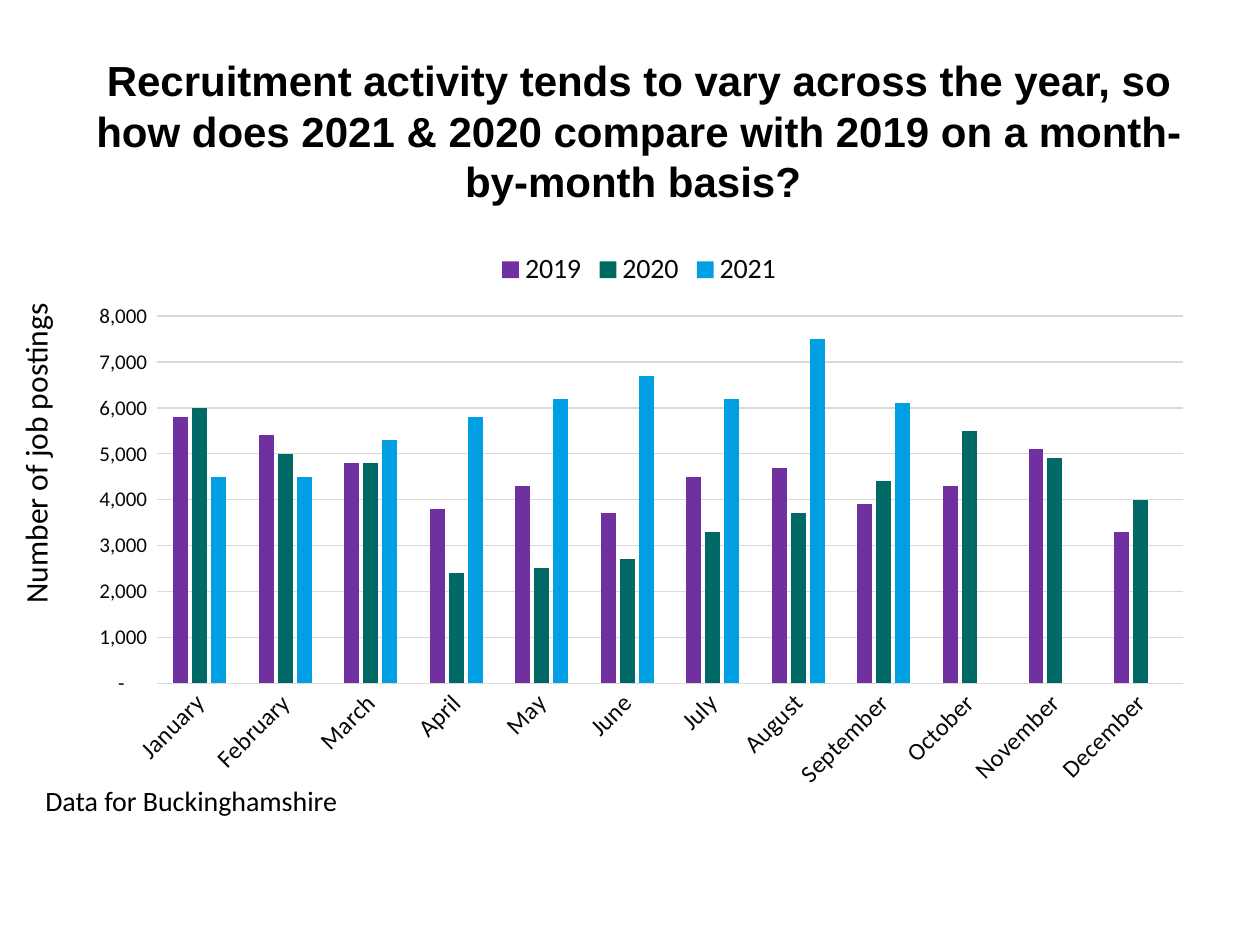
from pptx import Presentation
from pptx.chart.data import CategoryChartData
from pptx.dml.color import RGBColor
from pptx.enum.chart import XL_CHART_TYPE as ChartType, XL_LEGEND_POSITION as LegendPosition
from pptx.enum.chart import XL_TICK_MARK as TickMark
from pptx.enum.text import MSO_ANCHOR as Anchor, MSO_AUTO_SIZE as AutoSize, PP_ALIGN as Align
from pptx.util import Emu, Pt

EMU_PER_PX = 914400 / 126
BLACK = RGBColor(0x00, 0x00, 0x00)
LABEL = RGBColor(0x08, 0x08, 0x08)
GRID = RGBColor(0xD9, 0xD9, 0xD9)
PURPLE = RGBColor(0x70, 0x30, 0xA0)
GREEN = RGBColor(0x00, 0x69, 0x65)
BLUE = RGBColor(0x00, 0x9F, 0xE3)

NUMBER_FORMAT = '_-* #,##0_-;\\-* #,##0_-;_-* "-"??_-;_-@_-'
MONTHS = ["January", "February", "March", "April", "May", "June", "July",
          "August", "September", "October", "November", "December"]
POSTINGS = [
    ("2019", PURPLE, [5800, 5400, 4800, 3800, 4300, 3700,
                      4500, 4700, 3900, 4300, 5100, 3300]),
    ("2020", GREEN, [6000, 5000, 4800, 2400, 2500, 2700,
                     3300, 3700, 4400, 5500, 4900, 4000]),
    ("2021", BLUE, [4500, 4500, 5300, 5800, 6200, 6700,
                    6200, 7500, 6100, None, None, None]),
]


def px(*lengths):
    """Turn pixel lengths into EMU."""
    return [Emu(round(length * EMU_PER_PX)) for length in lengths]


def set_font(font, size, color, name="Calibri", bold=False):
    font.size = Pt(size)
    font.name = name
    font.bold = bold
    font.color.rgb = color


def set_line(line, color):
    line.color.rgb = color
    line.width = Pt(0.75)


class SlideBuilder:
    def __init__(self, presentation):
        self.slide = presentation.slides.add_slide(presentation.slide_layouts[6])

    def text(self, box, text, size, name="Calibri", bold=False,
             align=Align.LEFT, anchor=Anchor.TOP, auto_size=AutoSize.NONE, vertical=False):
        frame = self.slide.shapes.add_textbox(*px(*box)).text_frame
        frame.word_wrap = True
        frame.auto_size = auto_size
        frame.vertical_anchor = anchor
        if vertical:
            frame._txBody.bodyPr.set("vert", "vert270")
        paragraph = frame.paragraphs[0]
        paragraph.text = text
        paragraph.alignment = align
        set_font(paragraph.font, size, BLACK, name, bold)

    def column_chart(self, box, categories, series_rows):
        data = CategoryChartData(number_format=NUMBER_FORMAT)
        data.categories = categories
        for name, _, values in series_rows:
            data.add_series(name, values)
        chart = self.slide.shapes.add_chart(
            ChartType.COLUMN_CLUSTERED, *px(*box), data).chart
        set_font(chart.font, 10, BLACK)
        chart.has_title = False
        chart.has_legend = True
        chart.legend.position = LegendPosition.TOP
        chart.legend.include_in_layout = False
        set_font(chart.legend.font, 16, LABEL)

        plot = chart.plots[0]
        plot.gap_width = 219
        plot.overlap = -27
        plot.vary_by_categories = False
        for series, (_, color, _) in zip(plot.series, series_rows):
            series.format.fill.solid()
            series.format.fill.fore_color.rgb = color
            series.invert_if_negative = False

        for axis, size in ((chart.category_axis, 14), (chart.value_axis, 12)):
            axis.major_tick_mark = axis.minor_tick_mark = TickMark.NONE
            set_font(axis.tick_labels.font, size, LABEL)
        set_line(chart.category_axis.format.line, GRID)
        chart.category_axis._element.txPr.bodyPr.set("rot", "-2700000")

        value_axis = chart.value_axis
        value_axis.minimum_scale = 0
        value_axis.maximum_scale = 8000
        value_axis.major_unit = 1000
        value_axis.format.line.fill.background()
        set_line(value_axis.major_gridlines.format.line, GRID)
        value_axis.tick_labels.number_format = NUMBER_FORMAT
        value_axis.tick_labels.number_format_is_linked = False


def main():
    presentation = Presentation()
    presentation.slide_width, presentation.slide_height = px(1260, 945)
    builder = SlideBuilder(presentation)
    builder.text((72, 52, 1134, 157),
                 "Recruitment activity tends to vary across the year, so how does "
                 "2021 & 2020 compare with 2019 on a month-by-month basis? ",
                 24, "Arial", bold=True, align=Align.CENTER, anchor=Anchor.MIDDLE)
    builder.column_chart((72, 238, 1134, 562), MONTHS, POSTINGS)
    builder.text((33, 777, 476, 47), "Data for Buckinghamshire", 16,
                 auto_size=AutoSize.SHAPE_TO_FIT_TEXT)
    builder.text((10, 262, 63, 354), "Number of job postings", 18,
                 auto_size=AutoSize.SHAPE_TO_FIT_TEXT, vertical=True)
    presentation.save("out.pptx")


if __name__ == "__main__":
    main()
